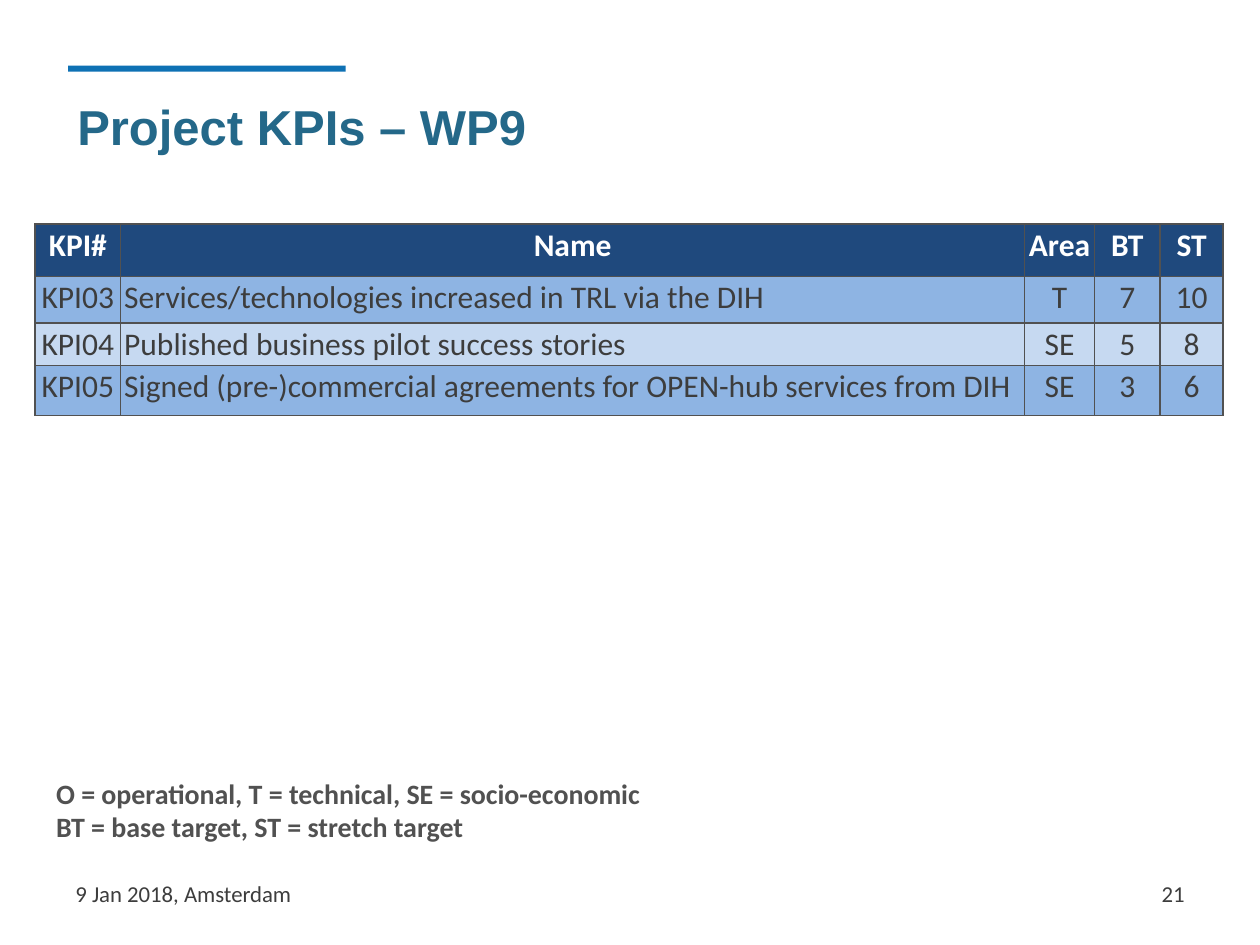
from lxml import etree
from pptx import Presentation
from pptx.dml.color import RGBColor
from pptx.enum.shapes import MSO_SHAPE
from pptx.enum.text import MSO_ANCHOR, PP_ALIGN
from pptx.oxml.ns import qn
from pptx.util import Pt

LEFT, CENTER, RIGHT = PP_ALIGN.LEFT, PP_ALIGN.CENTER, PP_ALIGN.RIGHT
TOP, MIDDLE = MSO_ANCHOR.TOP, MSO_ANCHOR.MIDDLE
RECTANGLE = MSO_SHAPE.RECTANGLE
TITLE_ONLY = 5

COLUMN_WIDTHS = [49, 516.5, 40, 37.5, 36]
ROW_HEIGHTS = [30, 26.5, 24.5, 28.5]
KPI_ROWS = [
    ["KPI#", "Name", "Area", "BT", "ST"],
    ["KPI03", "Services/technologies increased in TRL via the DIH", "T", "7", "10"],
    ["KPI04", "Published business pilot success stories", "SE", "5", "8"],
    ["KPI05", "Signed (pre-)commercial agreements for OPEN-hub services from DIH", "SE", "3", "6"],
]


def color(value):
    return RGBColor.from_string(value)


def write(frame, text, font="Calibri", size=18, ink="3D3D3D", bold=False, align=LEFT):
    frame.text = text
    for paragraph in frame.paragraphs:
        paragraph.alignment = align
        paragraph.font.name = font
        paragraph.font.size = Pt(size)
        paragraph.font.bold = bold
        paragraph.font.color.rgb = color(ink)


class SlideBuilder:
    accent = "0E71B4"
    title_ink = "246889"
    gray = "515151"
    header_fill = "1F497D"
    band_fills = ["8EB4E3", "C6D9F1"]

    def __init__(self, slide):
        self.slide = slide

    def bar(self, *box):
        shape = self.slide.shapes.add_shape(RECTANGLE, *map(Pt, box))
        shape.shadow.inherit = False
        shape.fill.solid()
        shape.fill.fore_color.rgb = color(self.accent)
        shape.line.fill.background()

    def title(self, text, *box):
        shape = self.slide.shapes.title
        shape.left, shape.top, shape.width, shape.height = map(Pt, box)
        shape.text_frame.vertical_anchor = MIDDLE
        write(shape.text_frame, text, font="Arial", size=28, ink=self.title_ink, bold=True)

    def text(self, text, *box, anchor=TOP, **style):
        frame = self.slide.shapes.add_textbox(*map(Pt, box)).text_frame
        frame.word_wrap = True
        frame.vertical_anchor = anchor
        write(frame, text, **style)

    def border(self, cell):
        properties = cell._tc.get_or_add_tcPr()
        for side in ("a:lnL", "a:lnR", "a:lnT", "a:lnB"):
            line = etree.SubElement(properties, qn(side), w=str(Pt(1)))
            fill = etree.SubElement(line, qn("a:solidFill"))
            etree.SubElement(fill, qn("a:srgbClr"), val=self.gray)

    def cell(self, cell, text, fill, **style):
        self.border(cell)
        cell.fill.solid()
        cell.fill.fore_color.rgb = color(fill)
        cell.margin_left = cell.margin_right = Pt(2)
        cell.margin_top = cell.margin_bottom = Pt(1.25)
        cell.vertical_anchor = TOP
        write(cell.text_frame, text, **style)

    def table(self, rows, left, top, widths, heights):
        box = map(Pt, (left, top, sum(widths), sum(heights)))
        table = self.slide.shapes.add_table(len(rows), len(widths), *box).table
        for column, width in zip(table.columns, widths):
            column.width = Pt(width)
        for row, height in zip(table.rows, heights):
            row.height = Pt(height)
        for i, values in enumerate(rows):
            header = i == 0
            fill = self.header_fill if header else self.band_fills[(i - 1) % 2]
            ink = "FFFFFF" if header else "3D3D3D"
            for j, value in enumerate(values):
                align = LEFT if j == 1 and not header else CENTER
                self.cell(table.cell(i, j), value, fill, ink=ink, bold=header, align=align)


def main():
    presentation = Presentation()
    presentation.slide_width, presentation.slide_height = Pt(720), Pt(540)
    slide = presentation.slides.add_slide(presentation.slide_layouts[TITLE_ONLY])
    builder = SlideBuilder(slide)
    builder.bar(39, 37.5, 158.5, 3.5)
    builder.title("Project KPIs – WP9", 37, 49, 430.5, 45.5)
    builder.table(KPI_ROWS, 20, 128, COLUMN_WIDTHS, ROW_HEIGHTS)
    builder.text(
        "O = operational, T = technical, SE = socio-economic\n"
        "BT = base target, ST = stretch target",
        25, 440, 659, 46, size=16, ink=builder.gray, bold=True,
    )
    builder.text("9 Jan 2018, Amsterdam", 36, 496, 168, 28.75, anchor=MIDDLE, size=13)
    builder.text("21", 516, 496, 168, 28.75, anchor=MIDDLE, size=13, align=RIGHT)
    presentation.save("out.pptx")


if __name__ == "__main__":
    main()
